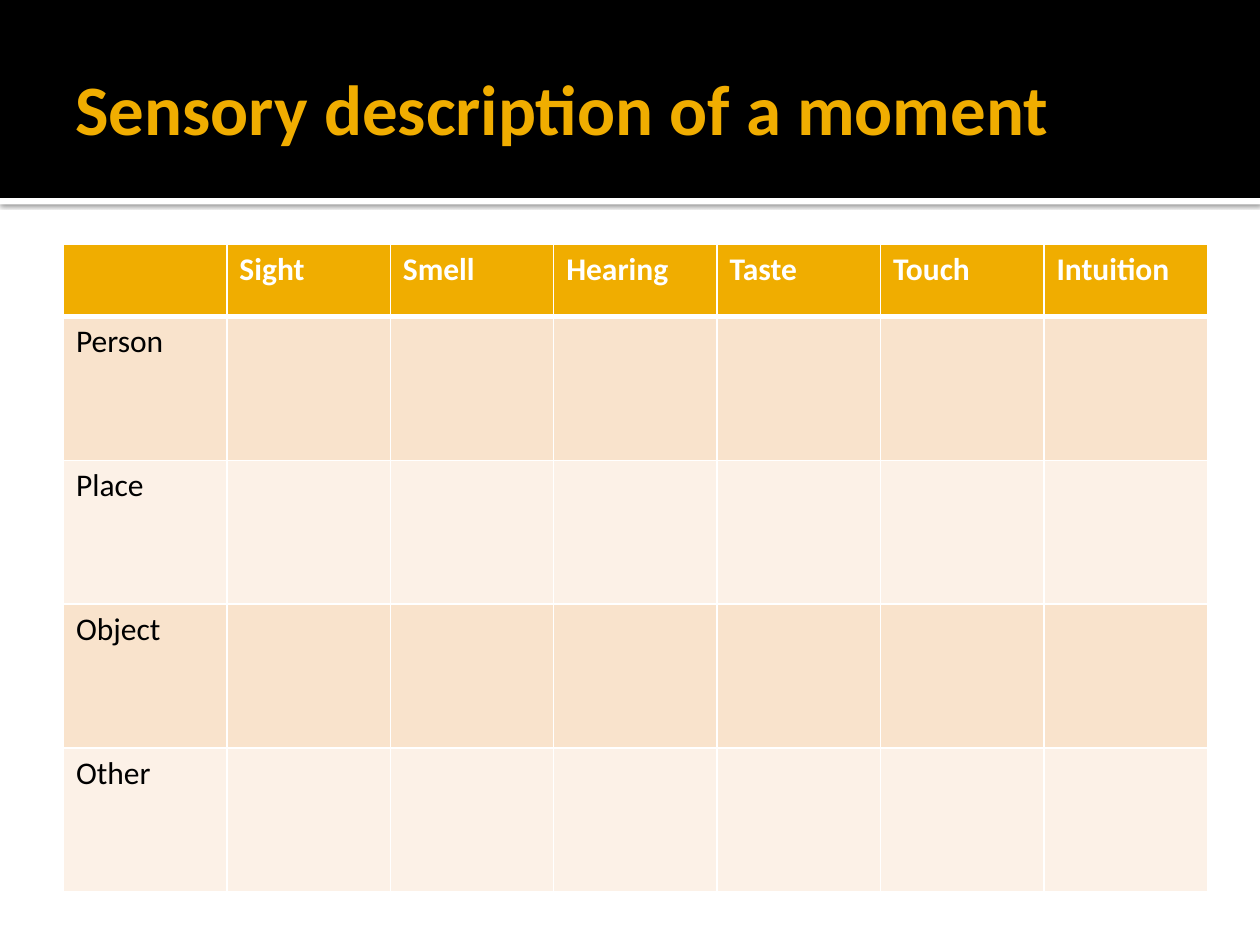
"""Build a slide with a grid for describing a moment through the senses."""
from lxml import etree
from pptx import Presentation
from pptx import util as u
from pptx.dml.color import RGBColor
from pptx.enum import shapes, text
from pptx.oxml import parse_xml
from pptx.oxml.ns import nsdecls, qn

HEADING = "Sensory description of a moment"
SENSES = ["Sight", "Smell", "Hearing", "Taste", "Touch", "Intuition"]
SUBJECTS = ["Person", "Place", "Object", "Other"]

THEME = {
    "font": "Calibri", "heading_size": 40.5, "grid_size": 18,
    "gold": "F0AD00", "black": "000000", "white": "FFFFFF",
    "stripes": ["F9E3CC", "FCF1E7"],
}
WIDTH, HEIGHT = u.Cm(25.4), u.Cm(19.05)
BANNER_HEIGHT, RULE_HEIGHT = u.Cm(3.99), u.Cm(0.13)
GRID_LEFT, GRID_TOP, GRID_WIDTH = u.Cm(1.28), u.Cm(4.93), u.Cm(23.06)
HEADER_HEIGHT, ROW_HEIGHT = u.Cm(1.45), u.Cm(2.9)


def style_font(font, size, color, bold):
    font.name, font.size, font.bold = THEME["font"], u.Pt(size), bold
    font.color.rgb = RGBColor.from_string(THEME[color])


def add_band(slide, top, height, color):
    band = slide.shapes.add_shape(shapes.MSO_SHAPE.RECTANGLE, 0, top, WIDTH, height)
    band.shadow.inherit = False
    band.fill.solid()
    band.fill.fore_color.rgb = RGBColor.from_string(THEME[color])
    band.line.fill.background()
    return band


def add_soft_shadow(band):
    effects = band._element.spPr.find(qn("a:effectLst"))
    effects.append(parse_xml(
        f'<a:outerShdw {nsdecls("a")} blurRad="{u.Pt(2.5)}" dist="{u.Pt(0.8)}" '
        f'dir="5400000" algn="tl" rotWithShape="0"><a:srgbClr val="{THEME["black"]}">'
        '<a:alpha val="60000"/></a:srgbClr></a:outerShdw>'))


def border_cell(cell, widths):
    properties = cell._tc.get_or_add_tcPr()
    for side, width in widths.items():
        line = etree.SubElement(properties, qn(f"a:ln{side}"), w=str(u.Pt(width)))
        fill = etree.SubElement(line, qn("a:solidFill"))
        etree.SubElement(fill, qn("a:srgbClr"), val=THEME["white"])


def add_heading(slide):
    heading = slide.shapes.title
    heading.left, heading.top = u.Cm(1.27), u.Cm(0.43)
    heading.width, heading.height = u.Cm(22.86), u.Cm(3.48)
    frame = heading.text_frame
    frame.text = HEADING
    frame.word_wrap = True
    frame.auto_size = text.MSO_AUTO_SIZE.NONE
    frame.vertical_anchor = text.MSO_ANCHOR.MIDDLE
    frame.margin_left = u.Cm(0.25)
    frame.margin_top = frame.margin_right = frame.margin_bottom = u.Cm(0.13)
    frame.paragraphs[0].alignment = text.PP_ALIGN.LEFT
    style_font(frame.paragraphs[0].font, THEME["heading_size"], "gold", True)
    slide.shapes._spTree.append(heading._element)


def add_grid(slide):
    rows = [["", *SENSES]] + [[subject] + [""] * len(SENSES) for subject in SUBJECTS]
    heights = [HEADER_HEIGHT] + [ROW_HEIGHT] * len(SUBJECTS)
    grid = slide.shapes.add_table(len(rows), len(rows[0]), GRID_LEFT, GRID_TOP,
                                  GRID_WIDTH, sum(heights)).table
    for row, height in zip(grid.rows, heights):
        row.height = height
    for r, labels in enumerate(rows):
        header = r == 0
        shade = THEME["gold"] if header else THEME["stripes"][(r - 1) % 2]
        widths = {"L": 1, "R": 1, "T": 3 if r == 1 else 1, "B": 3 if header else 1}
        for c, label in enumerate(labels):
            cell = grid.cell(r, c)
            cell.text = label
            style_font(cell.text_frame.paragraphs[0].font, THEME["grid_size"],
                       "white" if header else "black", header)
            border_cell(cell, widths)
            cell.fill.solid()
            cell.fill.fore_color.rgb = RGBColor.from_string(shade)


def main():
    deck = Presentation()
    deck.slide_width, deck.slide_height = WIDTH, HEIGHT
    slide = deck.slides.add_slide(deck.slide_layouts[5])
    add_soft_shadow(add_band(slide, BANNER_HEIGHT, RULE_HEIGHT, "white"))
    add_band(slide, 0, BANNER_HEIGHT, "black")
    add_heading(slide)
    add_grid(slide)
    deck.save("out.pptx")


if __name__ == "__main__":
    main()
